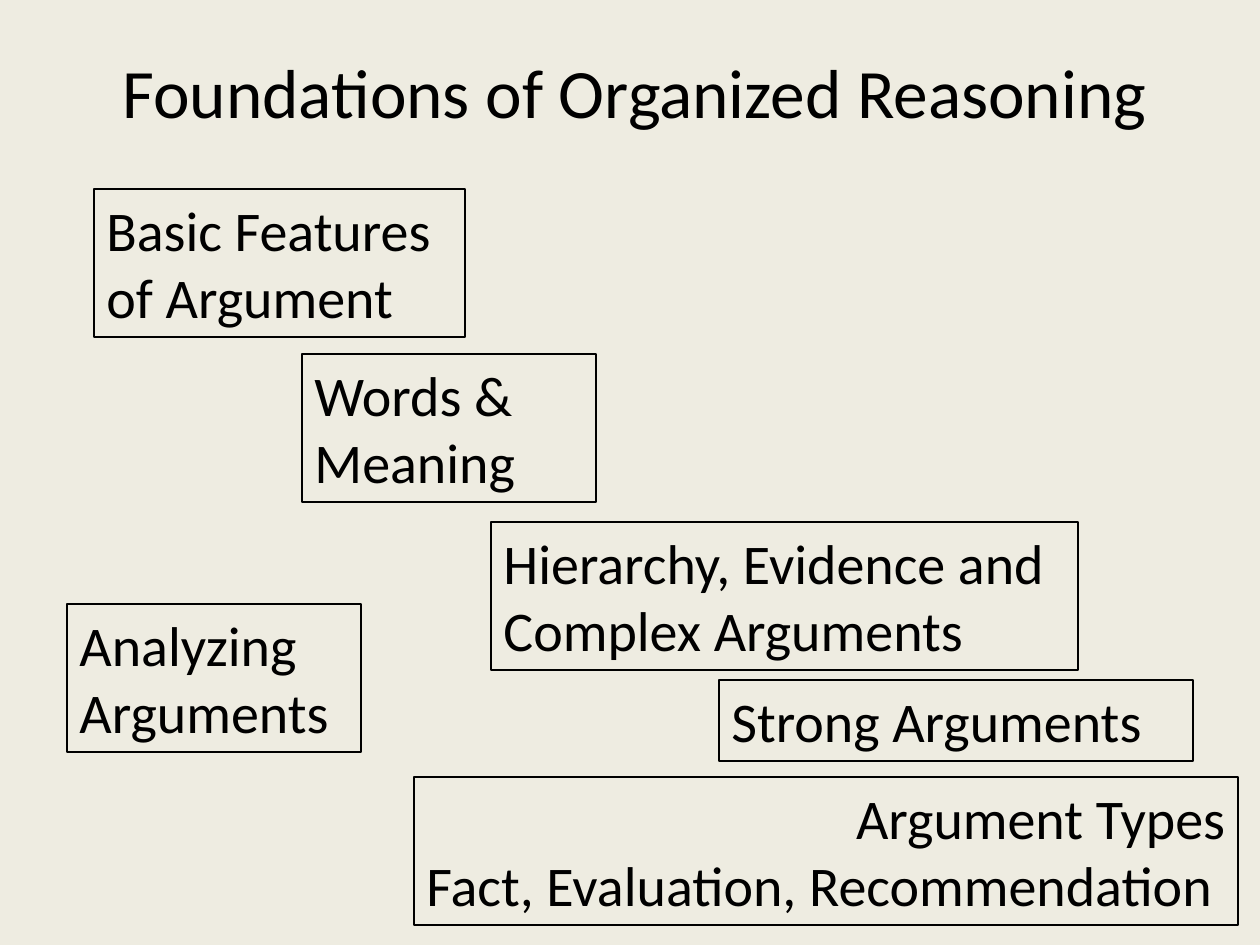
import pptx
import pptx.dml.color
import pptx.enum.text
import pptx.util

PX = 914400 / 126  # EMU per pixel
COLORS = {"background": "EEECE1", "ink": "000000"}
FONT = "Calibri"
ALIGN = pptx.enum.text.PP_ALIGN
ANCHOR = pptx.enum.text.MSO_ANCHOR

# Topic boxes: left, top, width, height, then (text, alignment) paragraphs
TOPICS = [
    (302, 354, 294, 148, [("Words & Meaning", ALIGN.LEFT)]),
    (491, 522, 587, 148,
     [("Hierarchy, Evidence and Complex Arguments", ALIGN.LEFT)]),
    (719, 680, 474, 81, [("Strong Arguments", ALIGN.LEFT)]),
    (94, 189, 371, 148, [("Basic Features of Argument", ALIGN.LEFT)]),
    (67, 604, 294, 148, [("Analyzing Arguments", ALIGN.LEFT)]),
    (414, 777, 824, 148,
     [("Argument Types", ALIGN.RIGHT),
      ("Fact, Evaluation, Recommendation", ALIGN.LEFT)]),
]


def emu(px):
    return pptx.util.Emu(round(px * PX))


def color(name):
    return pptx.dml.color.RGBColor.from_string(COLORS[name])


def write(paragraph, text, *, size, align=ALIGN.LEFT):
    paragraph.alignment = align
    run = paragraph.add_run()
    run.text = text
    run.font.name = FONT
    run.font.size = pptx.util.Pt(size)
    run.font.color.rgb = color("ink")


def add_text_box(slide, left, top, width, height, paragraphs, *, size,
                 anchor=ANCHOR.TOP):
    box = slide.shapes.add_textbox(*map(emu, (left, top, width, height)))
    frame = box.text_frame
    frame.word_wrap = True
    frame.vertical_anchor = anchor
    for index, (text, align) in enumerate(paragraphs):
        paragraph = frame.add_paragraph() if index else frame.paragraphs[0]
        write(paragraph, text, size=size, align=align)
    return box


def add_topic(slide, left, top, width, height, paragraphs):
    topic = add_text_box(slide, left, top, width, height, paragraphs, size=32)
    topic.text_frame.auto_size = pptx.enum.text.MSO_AUTO_SIZE.SHAPE_TO_FIT_TEXT
    topic.line.color.rgb = color("ink")
    topic.line.width = pptx.util.Pt(0.75)


def main():
    deck = pptx.Presentation()
    deck.slide_width = emu(1260)
    deck.slide_height = emu(945)
    slide = deck.slides.add_slide(deck.slide_layouts[6])

    # Background
    slide.background.fill.solid()
    slide.background.fill.fore_color.rgb = color("background")

    # Title
    add_text_box(slide, 94, 42, 1081, 97,
                 [("Foundations of Organized Reasoning", ALIGN.CENTER)],
                 size=39.6, anchor=ANCHOR.MIDDLE)

    # Staggered topics
    for topic in TOPICS:
        add_topic(slide, *topic)

    deck.save("out.pptx")


if __name__ == "__main__":
    main()
